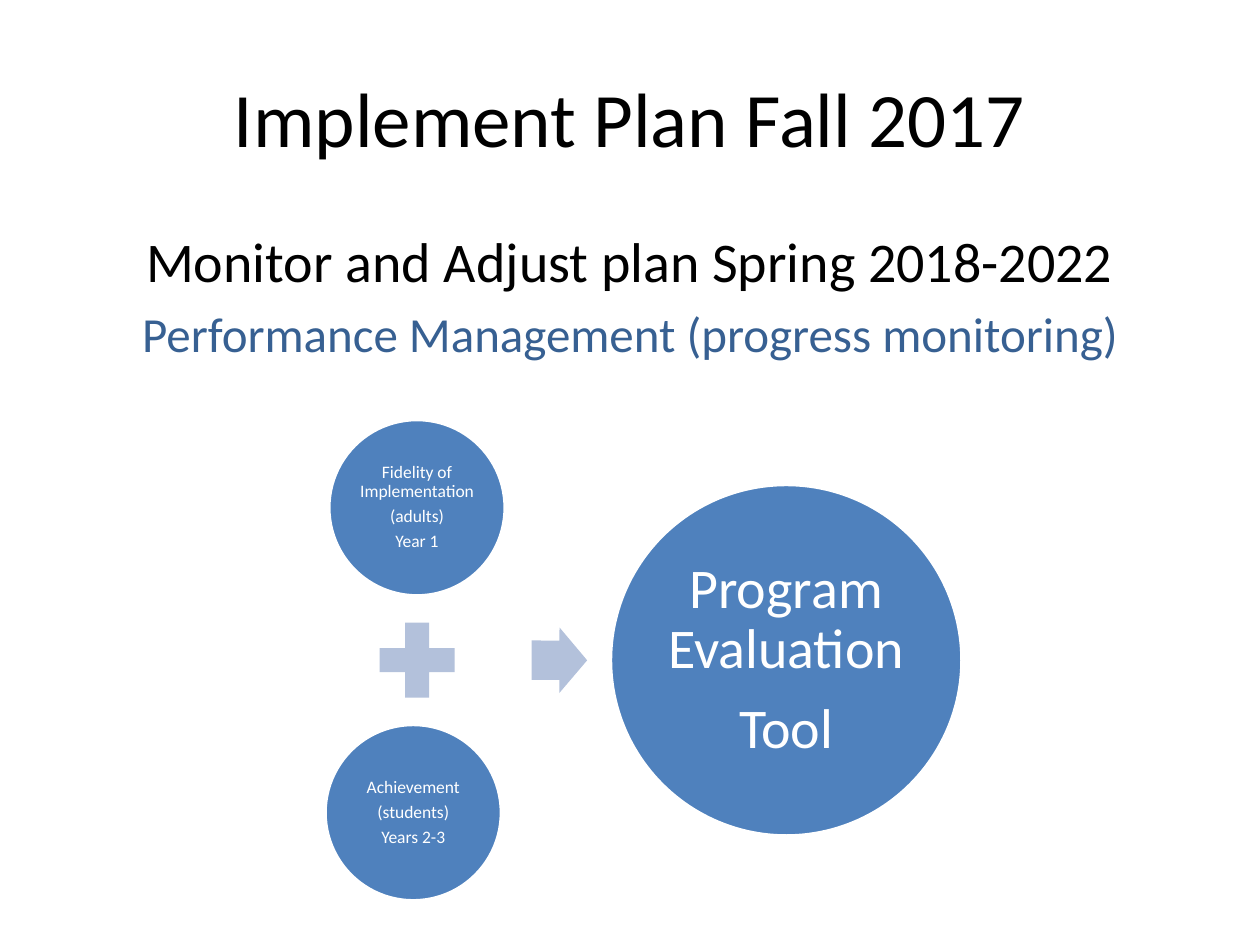
"""Build the slide on implementing, monitoring and evaluating the plan."""
from pptx import Presentation
from pptx import util as u
from pptx.dml.color import RGBColor
from pptx.enum import shapes, text

BLACK = RGBColor(0x00, 0x00, 0x00)
WHITE = RGBColor(0xFF, 0xFF, 0xFF)
NAVY = RGBColor(0x37, 0x60, 0x92)
BLUE = RGBColor(0x4F, 0x81, 0xBD)
PALE = RGBColor(0xB3, 0xC1, 0xDB)
FONT = "Calibri"


def add_line(frame, index, wording, size, color):
    para = frame.paragraphs[0] if index == 0 else frame.add_paragraph()
    para.alignment = text.PP_ALIGN.CENTER
    span = para.add_run()
    span.text = wording
    span.font.name = FONT
    span.font.size = u.Pt(size)
    span.font.color.rgb = color
    return para


def add_figure(page, kind, center_x, center_y, width, height, color):
    figure = page.shapes.add_shape(
        kind, u.Inches(center_x - width / 2), u.Inches(center_y - height / 2),
        u.Inches(width), u.Inches(height))
    figure.shadow.inherit = False
    figure.fill.solid()
    figure.fill.fore_color.rgb = color
    figure.line.fill.background()
    return figure


deck = Presentation()
deck.slide_width, deck.slide_height = u.Inches(10), u.Inches(7.5)
page = deck.slides.add_slide(deck.slide_layouts[5])
margin = int(deck.slide_width * 0.05)
content_width = deck.slide_width - 2 * margin

title = page.shapes.title
title.left, title.top = margin, int(deck.slide_height * 0.04)
title.width, title.height = content_width, u.Inches(1.25)
title.text_frame.vertical_anchor = text.MSO_ANCHOR.MIDDLE
add_line(title.text_frame, 0, "Implement Plan Fall 2017", 44, BLACK)

body = page.shapes.add_textbox(margin, u.Inches(1.75), content_width, int(deck.slide_height * 0.66))
body.text_frame.word_wrap = True
subtitles = [
    ("Monitor and Adjust plan Spring 2018-2022", 32, BLACK),
    ("Performance Management (progress monitoring)", 28, NAVY),
]
for index, (wording, size, color) in enumerate(subtitles):
    para = add_line(body.text_frame, index, wording, size, color)
    para.space_before = u.Pt(size * 0.2)

axis_y = 5.24
circles = [
    (3.31, 4.03, 1.4, 10, 0.01, ["Fidelity of Implementation", "(adults)", "Year 1"]),
    (3.28, 6.45, 1.4, 10, 0.01, ["Achievement", "(students)", "Years 2-3"]),
    (6.24, axis_y, 2.79, 32, 0.04, ["Program Evaluation", "Tool"]),
]
for center_x, center_y, diameter, size, inset, lines in circles:
    circle = add_figure(page, shapes.MSO_SHAPE.OVAL, center_x, center_y, diameter, diameter, BLUE)
    circle.line.color.rgb = WHITE
    circle.line.width = u.Pt(2)
    frame = circle.text_frame
    frame.word_wrap = True
    frame.vertical_anchor = text.MSO_ANCHOR.MIDDLE
    frame.margin_left = frame.margin_right = u.Inches(inset)
    frame.margin_top = frame.margin_bottom = u.Inches(inset)
    for index, wording in enumerate(lines):
        para = add_line(frame, index, wording, size, WHITE)
        para.line_spacing = 0.9
        para.space_after = u.Pt(size * 0.35)

add_figure(page, shapes.MSO_SHAPE.MATH_PLUS, 3.31, axis_y, 0.81, 0.81, PALE)
arrow = add_figure(page, shapes.MSO_SHAPE.RIGHT_ARROW, 4.44, axis_y, 0.44, 0.52, PALE)
arrow.adjustments[0], arrow.adjustments[1] = 0.6, 0.5
arrow.rotation = 0.2

deck.save("out.pptx")
